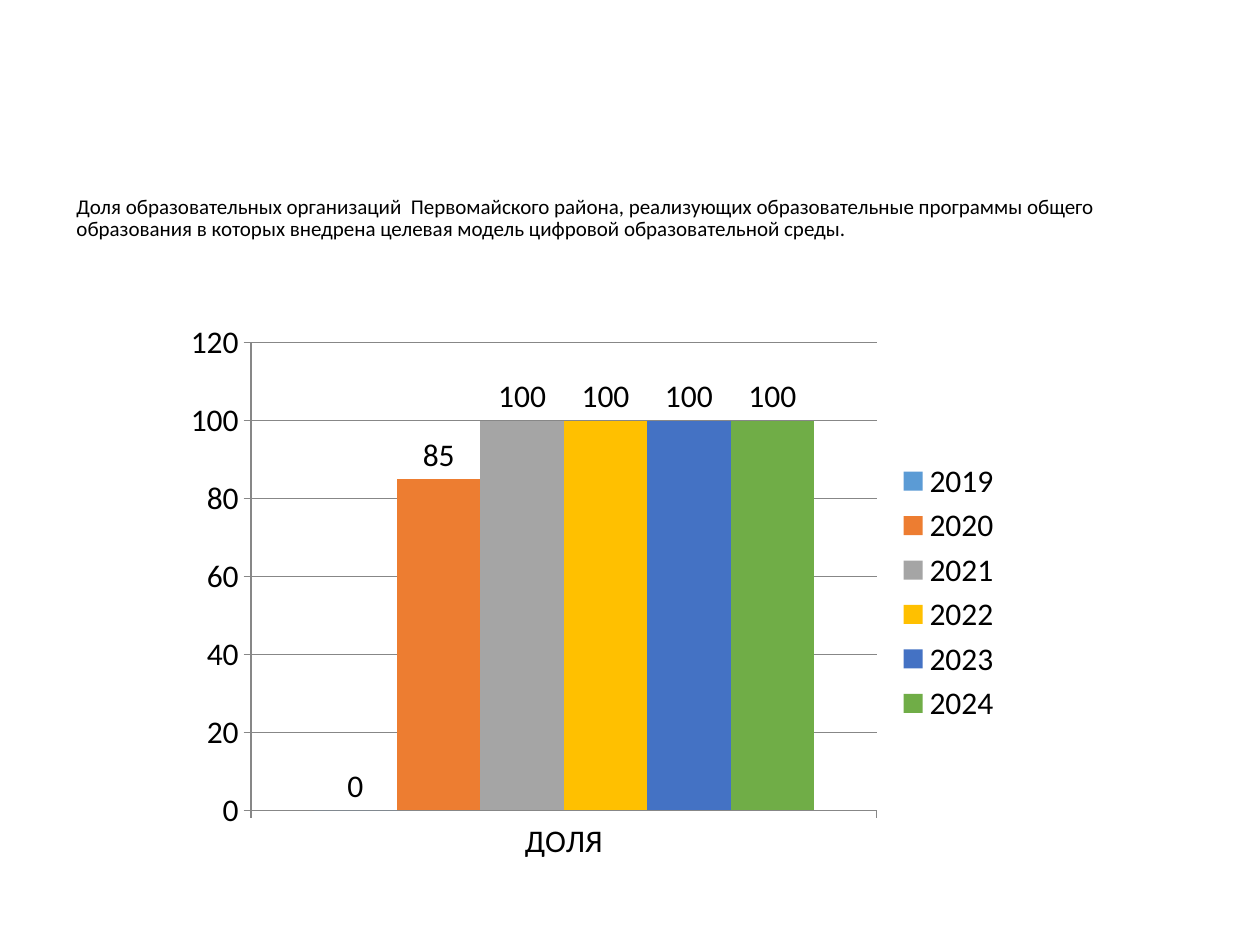
from pptx import Presentation
from pptx.chart.data import CategoryChartData
from pptx.dml.color import RGBColor
from pptx.enum.chart import XL_CHART_TYPE, XL_LABEL_POSITION, XL_LEGEND_POSITION, XL_TICK_MARK
from pptx.enum.text import MSO_ANCHOR
from pptx.util import Pt

COLUMNS = XL_CHART_TYPE.COLUMN_CLUSTERED
LABEL_ABOVE = XL_LABEL_POSITION.OUTSIDE_END
LEGEND_RIGHT = XL_LEGEND_POSITION.RIGHT
TICK_OUTSIDE = XL_TICK_MARK.OUTSIDE
ANCHOR_TOP = MSO_ANCHOR.TOP

TITLE = (
    "Доля образовательных организаций  Первомайского района, реализующих "
    "образовательные программы общего образования в которых внедрена "
    "целевая модель цифровой образовательной среды."
)
CATEGORY = "ДОЛЯ"
YEARS = [
    ("2019", 0, "5B9BD5"),
    ("2020", 85, "ED7D31"),
    ("2021", 100, "A5A5A5"),
    ("2022", 100, "FFC000"),
    ("2023", 100, "4472C4"),
    ("2024", 100, "70AD47"),
]
THEME = {
    "font": "Calibri",
    "text": "000000",
    "line": "878787",
    "background": "FFFFFF",
    "title_size": 12,
    "chart_size": 18,
}
SLIDE_SIZE = (720, 540)
TITLE_BOX = (36.6, 108.4, 656.6, 36)
CHART_BOX = (99.4, 178.6, 480.2, 319.7)


def points(values):
    return [Pt(value) for value in values]


def style_font(font, size):
    font.name = THEME["font"]
    font.size = Pt(size)
    font.bold = False
    font.color.rgb = RGBColor.from_string(THEME["text"])


def style_line(line):
    line.color.rgb = RGBColor.from_string(THEME["line"])
    line.width = Pt(0.75)


def add_title(slide):
    frame = slide.shapes.add_textbox(*points(TITLE_BOX)).text_frame
    frame.word_wrap = True
    frame.vertical_anchor = ANCHOR_TOP
    paragraph = frame.paragraphs[0]
    paragraph.line_spacing = 0.9
    run = paragraph.add_run()
    run.text = TITLE
    style_font(run.font, THEME["title_size"])


def add_year_chart(slide):
    data = CategoryChartData(number_format="General")
    data.categories = [CATEGORY]
    for year, share, _ in YEARS:
        data.add_series(year, [share])
    chart = slide.shapes.add_chart(COLUMNS, *points(CHART_BOX), data).chart
    style_font(chart.font, THEME["chart_size"])
    chart.has_title = False
    chart.has_legend = True
    chart.legend.position = LEGEND_RIGHT
    chart.legend.include_in_layout = False

    for axis in (chart.category_axis, chart.value_axis):
        axis.major_tick_mark = TICK_OUTSIDE
        style_line(axis.format.line)
    value_axis = chart.value_axis
    value_axis.minimum_scale = 0
    value_axis.maximum_scale = 120
    value_axis.major_unit = 20
    value_axis.has_major_gridlines = True
    style_line(value_axis.major_gridlines.format.line)

    plot = chart.plots[0]
    plot.gap_width = 150
    plot.overlap = 0
    plot.vary_by_categories = False
    for series, (_, _, color) in zip(plot.series, YEARS):
        series.format.fill.solid()
        series.format.fill.fore_color.rgb = RGBColor.from_string(color)
        series.data_labels.show_value = True
        series.data_labels.position = LABEL_ABOVE


def main():
    presentation = Presentation()
    presentation.slide_width, presentation.slide_height = points(SLIDE_SIZE)
    slide = presentation.slides.add_slide(presentation.slide_layouts[6])
    slide.background.fill.solid()
    slide.background.fill.fore_color.rgb = RGBColor.from_string(THEME["background"])
    add_title(slide)
    add_year_chart(slide)
    presentation.save("out.pptx")


if __name__ == "__main__":
    main()
